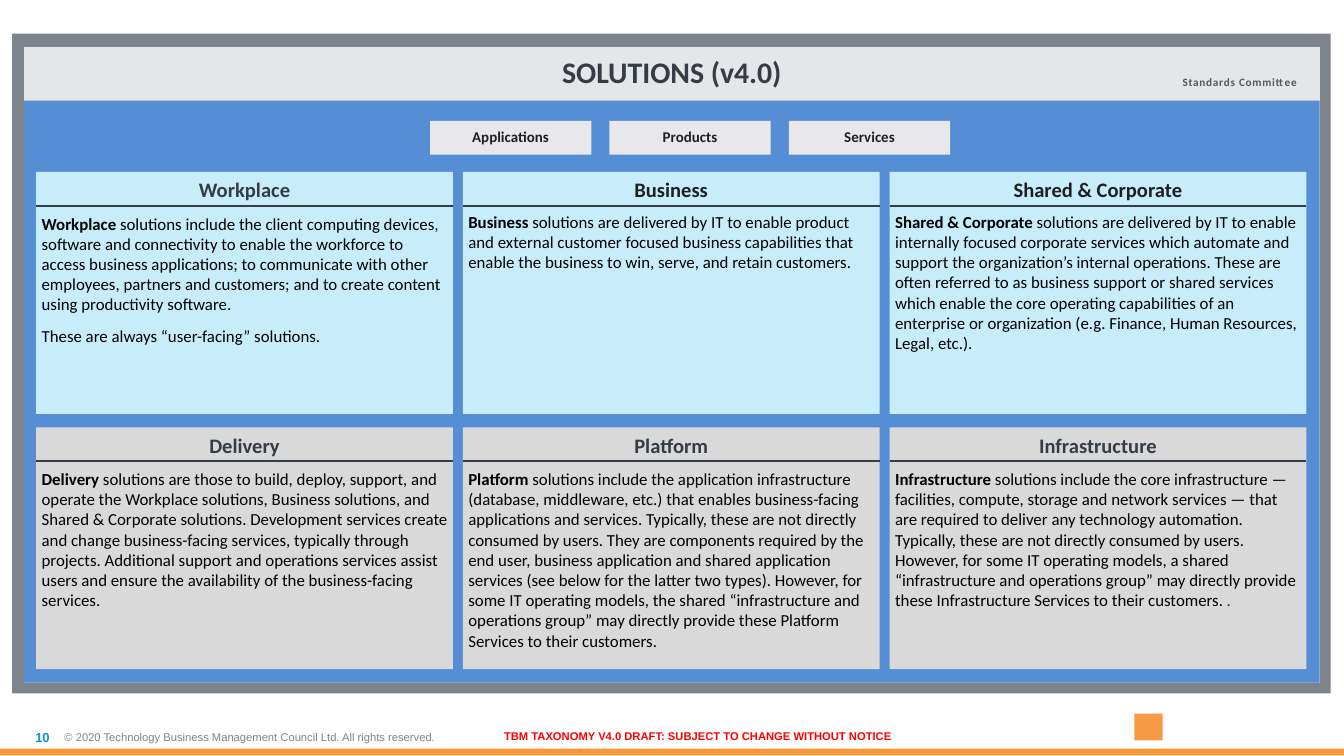
from pptx import Presentation
from pptx.dml.color import RGBColor
from pptx.enum.shapes import MSO_CONNECTOR, MSO_SHAPE
from pptx.enum.text import MSO_ANCHOR, PP_ALIGN
from pptx.oxml.ns import qn
from pptx.util import Inches, Pt
from lxml import etree

RECTANGLE = MSO_SHAPE.RECTANGLE
STRAIGHT = MSO_CONNECTOR.STRAIGHT
TOP, MIDDLE = MSO_ANCHOR.TOP, MSO_ANCHOR.MIDDLE
LEFT, CENTER, RIGHT = PP_ALIGN.LEFT, PP_ALIGN.CENTER, PP_ALIGN.RIGHT
SLATE, INK, BLACK = "353C45", "1E1F21", "000000"

TITLE = "SOLUTIONS (v4.0)"
TABS = ["Applications", "Products", "Services"]
CARD_ROWS = [
    ("C7EDFB", [
        ("Workplace", SLATE, 6, [
            [("Workplace ", True, BLACK),
             ("solutions include the client computing devices, software and connectivity to enable the workforce "
              "to access business applications; to communicate with other employees, partners and customers; "
              "and to create content using productivity software.", False, BLACK)],
            [("These are always “user-facing” solutions.", False, BLACK)]]),
        ("Business", INK, 5, [
            [("Business ", True, BLACK),
             ("solutions are delivered by IT to enable product and external customer focused business "
              "capabilities that enable the business to win, serve, and retain customers.", False, BLACK)]]),
        ("Shared & Corporate", INK, 5, [
            [("Shared & Corporate", True, BLACK),
             (" solutions are delivered by IT to enable internally focused corporate services which automate "
              "and support the organization’s internal operations. These are often referred to as business "
              "support or shared services which enable the core operating capabilities of an enterprise or "
              "organization (e.g. Finance, Human Resources, Legal, etc.).", False, BLACK)]]),
    ]),
    ("D9D9D9", [
        ("Delivery", SLATE, 6, [
            [("Delivery ", True, BLACK),
             ("solutions are those to build, deploy, support, and operate the Workplace solutions, Business "
              "solutions, and Shared & Corporate solutions. Development services create and change "
              "business-facing services, typically through projects. Additional support and operations services "
              "assist users and ensure the availability of the business-facing services.", False, BLACK)]]),
        ("Platform", SLATE, 6, [
            [("Platform ", True, BLACK),
             ("solutions include the application infrastructure (database, middleware, etc.) that enables "
              "business-facing applications and services. Typically, these are not directly consumed by users. "
              "They are components required by the end user, business application and shared application "
              "services (see below for the latter two types). However, for some IT operating models, the shared "
              "“infrastructure and operations group” may directly provide these Platform Services to their "
              "customers.", False, BLACK)]]),
        ("Infrastructure", SLATE, 6, [
            [("Infrastructure ", True, BLACK),
             ("solutions include the core infrastructure — facilities, compute, storage and network services — "
              "that are required to deliver any technology automation. Typically, these are not directly "
              "consumed by users. However, for some IT operating models, a shared “infrastructure and "
              "operations group” may directly provide these Infrastructure Services to their customers. ",
              False, BLACK),
             (".", False, SLATE)]]),
    ]),
]
FOOTER = [
    ("© 2020 Technology Business Management Council Ltd. All rights reserved.",
     (0.48, 5.34, 3.36, 0.29), 6, "7E848B", False, LEFT),
    ("10", (0, 5.34, 0.37, 0.29), 7, "0D96C9", True, RIGHT),
    ("TBM TAXONOMY V4.0 DRAFT: SUBJECT TO CHANGE WITHOUT NOTICE",
     (3.73, 5.43, 2.92, 0.1), 6, "FF0000", True, CENTER),
]

CARD_LEFT, CARD_TOP, CARD_WIDTH, CARD_HEIGHT = 0.27, 1.28, 3.1, 1.8
LAST_CARD_LEFT, ROW_STEP, HEADING_HEIGHT = 6.62, 1.9, 0.25
COLUMN_STEP = (LAST_CARD_LEFT - CARD_LEFT) / 2
TAB_LEFT, LAST_TAB_LEFT = 3.2, 5.87
TAB_STEP = (LAST_TAB_LEFT - TAB_LEFT) / (len(TABS) - 1)


def color(value):
    return RGBColor.from_string(value)


def fill_solid(shape, value):
    shape.fill.solid()
    shape.fill.fore_color.rgb = color(value)


def add_box(page, place, fill):
    box = page.shapes.add_shape(RECTANGLE, *map(Inches, place))
    box.shadow.inherit = False
    box.line.fill.background()
    fill_solid(box, fill)
    return box


def format_frame(frame, inset, anchor, wrap=True):
    values = {"word_wrap": wrap, "vertical_anchor": anchor}
    for side in ("left", "top", "right", "bottom"):
        values[f"margin_{side}"] = Inches(inset)
    for name, value in values.items():
        setattr(frame, name, value)


def add_span(para, text, size, value, bold, font="Calibri"):
    span = para.add_run()
    span.text = text
    for name, setting in {"size": Pt(size), "bold": bold, "name": font}.items():
        setattr(span.font, name, setting)
    span.font.color.rgb = color(value)
    return span


def format_para(para, align, before=0, spacing=1.0):
    values = {"alignment": align, "space_before": Pt(before), "line_spacing": spacing}
    for name, value in values.items():
        setattr(para, name, value)


def add_label(page, text, place, size, value, bold, align, font="Arial", anchor=MIDDLE, wrap=True):
    box = page.shapes.add_textbox(*map(Inches, place))
    format_frame(box.text_frame, 0, anchor, wrap)
    para = box.text_frame.paragraphs[0]
    format_para(para, align)
    return add_span(para, text, size, value, bold, font)


def add_title(page):
    title = page.shapes.title
    title.left, title.top, title.width, title.height = map(Inches, (0.18, 0.35, 9.64, 4.73))
    title.element.getparent().append(title.element)
    fill_solid(title, "E5E6E8")
    format_frame(title.text_frame, 0.05, TOP)
    para = title.text_frame.paragraphs[0]
    format_para(para, CENTER)
    add_span(para, TITLE, 16, SLATE, True)


def add_tab(page, text, left):
    box = add_box(page, (left, 0.9, 1.2, 0.25), "E8E8EA")
    format_frame(box.text_frame, 0.05, MIDDLE, False)
    para = box.text_frame.paragraphs[0]
    format_para(para, CENTER, spacing=0.85)
    add_span(para, text, 8, INK, True)


def add_card(page, left, top, fill, heading, heading_color, before, body):
    box = add_box(page, (left, top, CARD_WIDTH, CARD_HEIGHT), fill)
    format_frame(box.text_frame, 0.04, TOP)
    para = box.text_frame.paragraphs[0]
    format_para(para, CENTER)
    add_span(para, heading, 11, heading_color, True)
    for spans in body:
        para = box.text_frame.add_paragraph()
        format_para(para, LEFT, before)
        for text, bold, value in spans:
            add_span(para, text, 9, value, bold)
    rule_top = top + HEADING_HEIGHT
    rule = page.shapes.add_connector(
        STRAIGHT, *map(Inches, (left, rule_top, left + CARD_WIDTH, rule_top)))
    rule.line.color.rgb = color(SLATE)
    rule.line.width = Pt(1)
    etree.SubElement(rule.element.spPr, qn("a:effectLst"))


def main():
    deck = Presentation()
    deck.slide_width = Inches(10)
    deck.slide_height = deck.slide_width * 9 // 16
    page = deck.slides.add_slide(deck.slide_layouts[5])

    for label in FOOTER:
        add_label(page, *label, wrap=label[-1] != CENTER)
    add_box(page, (8.44, 5.31, 0.21, 0.2), "F89946")
    add_box(page, (0, 5.57, 10, 0.05), "F89838")

    add_box(page, (0.09, 0.25, 9.81, 4.91), "7E848B")
    add_title(page)
    add_box(page, (0.18, 0.75, 9.64, 4.33), "558ED5")
    committee = add_label(page, "Standards Committee", (8.8, 0.56, 0.87, 0.1), 6, "53565C", True,
                          LEFT, "Calibri", TOP, False)
    committee.font._element.set("spc", "40")

    for index, text in enumerate(TABS):
        add_tab(page, text, TAB_LEFT + index * TAB_STEP)
    for row, (fill, cards) in enumerate(CARD_ROWS):
        for column, card in enumerate(cards):
            add_card(page, CARD_LEFT + column * COLUMN_STEP, CARD_TOP + row * ROW_STEP, fill, *card)

    deck.save("out.pptx")


if __name__ == "__main__":
    main()
